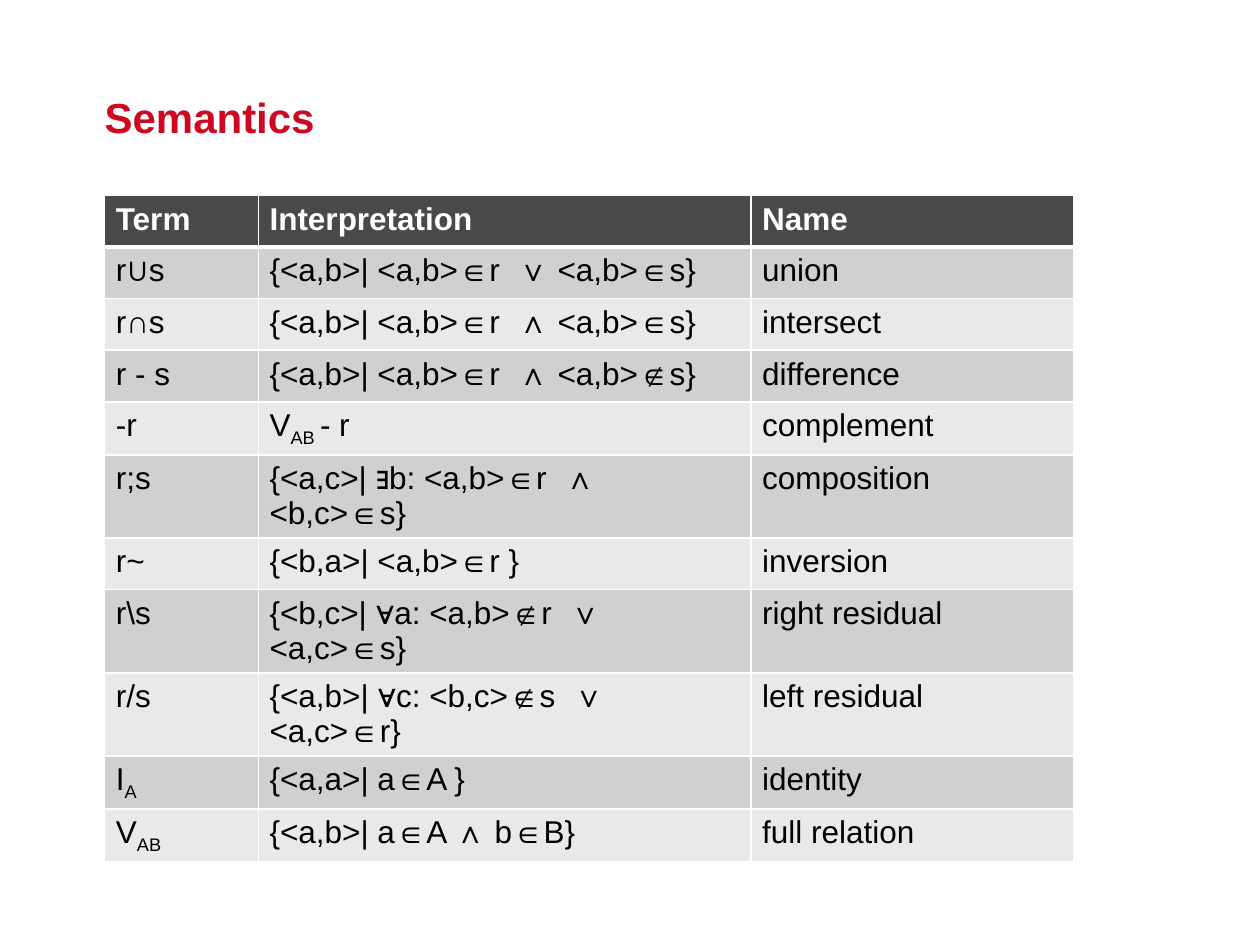
from lxml.etree import SubElement
from pptx import Presentation
from pptx.dml.color import RGBColor
from pptx.enum.text import MSO_ANCHOR, PP_ALIGN
from pptx.oxml.ns import qn
from pptx.util import Inches, Pt

COLORS = {
    "title": "CD0921",
    "header": "494949",
    "odd_row": "D0D0D0",
    "even_row": "E9E9E9",
    "text": "000000",
    "white": "FFFFFF",
}
FONT = "Arial"
COLUMN_WIDTHS = (1.22, 3.91, 2.56)
ROW_HEIGHT = 0.41
TWO_LINE_HEIGHT = 0.66
# Underscores enclose a subscript.
HEADER = ("Term", "Interpretation", "Name")
RELATIONS = [
    ("r∪s", "{<a,b>| <a,b>∈r  ∨ <a,b>∈s}", "union"),
    ("r∩s", "{<a,b>| <a,b>∈r  ∧ <a,b>∈s}", "intersect"),
    ("r - s", "{<a,b>| <a,b>∈r  ∧ <a,b>∉s}", "difference"),
    ("-r", "V_AB _- r", "complement"),
    ("r;s", "{<a,c>| ∃b: <a,b>∈r  ∧ <b,c>∈s}", "composition"),
    ("r~", "{<b,a>| <a,b>∈r }", "inversion"),
    ("r\\s", "{<b,c>| ∀a: <a,b>∉r  ∨ <a,c>∈s}", "right residual"),
    ("r/s", "{<a,b>| ∀c: <b,c>∉s  ∨ <a,c>∈r}", "left residual"),
    ("I_A_", "{<a,a>| a∈A }", "identity"),
    ("V_AB_", "{<a,b>| a∈A ∧ b∈B}", "full relation"),
]


def color(name):
    return RGBColor.from_string(COLORS[name])


def add_run(paragraph, text, size, color_name, bold=False):
    run = paragraph.add_run()
    run.text = text
    run.font.name = FONT
    run.font.size = Pt(size)
    run.font.bold = bold
    run.font.color.rgb = color(color_name)
    return run


def add_term(paragraph, term, color_name, bold):
    """Write a term, lowering the parts enclosed in underscores."""
    for index, part in enumerate(term.split("_")):
        if part:
            run = add_run(paragraph, part, 18, color_name, bold)
            if index % 2:
                run.font._element.set("baseline", "-25000")


def set_borders(cell, top_width, bottom_width):
    properties = cell._tc.get_or_add_tcPr()
    sides = {"a:lnL": 1, "a:lnR": 1, "a:lnT": top_width, "a:lnB": bottom_width}
    for side, width in sides.items():
        line = SubElement(properties, qn(side), w=str(Pt(width)))
        line_fill = SubElement(line, qn("a:solidFill"))
        SubElement(line_fill, qn("a:srgbClr"), val=COLORS["white"])


def add_title(slide, text):
    title = slide.shapes.title
    title.left, title.top = Inches(0.83), Inches(0.3)
    title.width, title.height = Inches(7.69), Inches(1.25)
    frame = title.text_frame
    frame.margin_left = frame.margin_right = 0
    frame.margin_top = frame.margin_bottom = 0
    frame.vertical_anchor = MSO_ANCHOR.MIDDLE
    frame.paragraphs[0].alignment = PP_ALIGN.LEFT
    add_run(frame.paragraphs[0], text, 24, "title", bold=True)


def fill_cell(cell, text, row_index):
    is_header = row_index == 0
    # Borders come before the fill in the cell properties.
    set_borders(cell, 3 if row_index == 1 else 1, 3 if is_header else 1)
    cell.fill.solid()
    fill_name = "header" if is_header else "odd_row" if row_index % 2 else "even_row"
    cell.fill.fore_color.rgb = color(fill_name)
    cell.margin_left = cell.margin_right = Inches(0.09)
    cell.margin_top = cell.margin_bottom = Inches(0.05)
    add_term(cell.text_frame.paragraphs[0], text,
             "white" if is_header else "text", is_header)


def is_quantified(interpretation):
    return "∃" in interpretation or "∀" in interpretation


def add_semantics_table(slide):
    rows = [HEADER, *RELATIONS]
    table = slide.shapes.add_table(
        len(rows), len(HEADER), Inches(0.83), Inches(1.55),
        Inches(sum(COLUMN_WIDTHS)), Inches(ROW_HEIGHT * len(rows))).table
    for column, width in zip(table.columns, COLUMN_WIDTHS):
        column.width = Inches(width)
    for row_index, texts in enumerate(rows):
        quantified = is_quantified(texts[1])
        table.rows[row_index].height = Inches(
            TWO_LINE_HEIGHT if quantified else ROW_HEIGHT)
        for column_index, text in enumerate(texts):
            fill_cell(table.cell(row_index, column_index), text, row_index)
        if quantified:
            # A wider margin moves the second pair to its own line.
            table.cell(row_index, 1).margin_right = Inches(0.8)


def main():
    presentation = Presentation()
    presentation.slide_width = Inches(10)
    presentation.slide_height = Inches(7.5)
    slide = presentation.slides.add_slide(presentation.slide_layouts[5])
    add_title(slide, "Semantics")
    add_semantics_table(slide)
    presentation.save("out.pptx")


if __name__ == "__main__":
    main()
